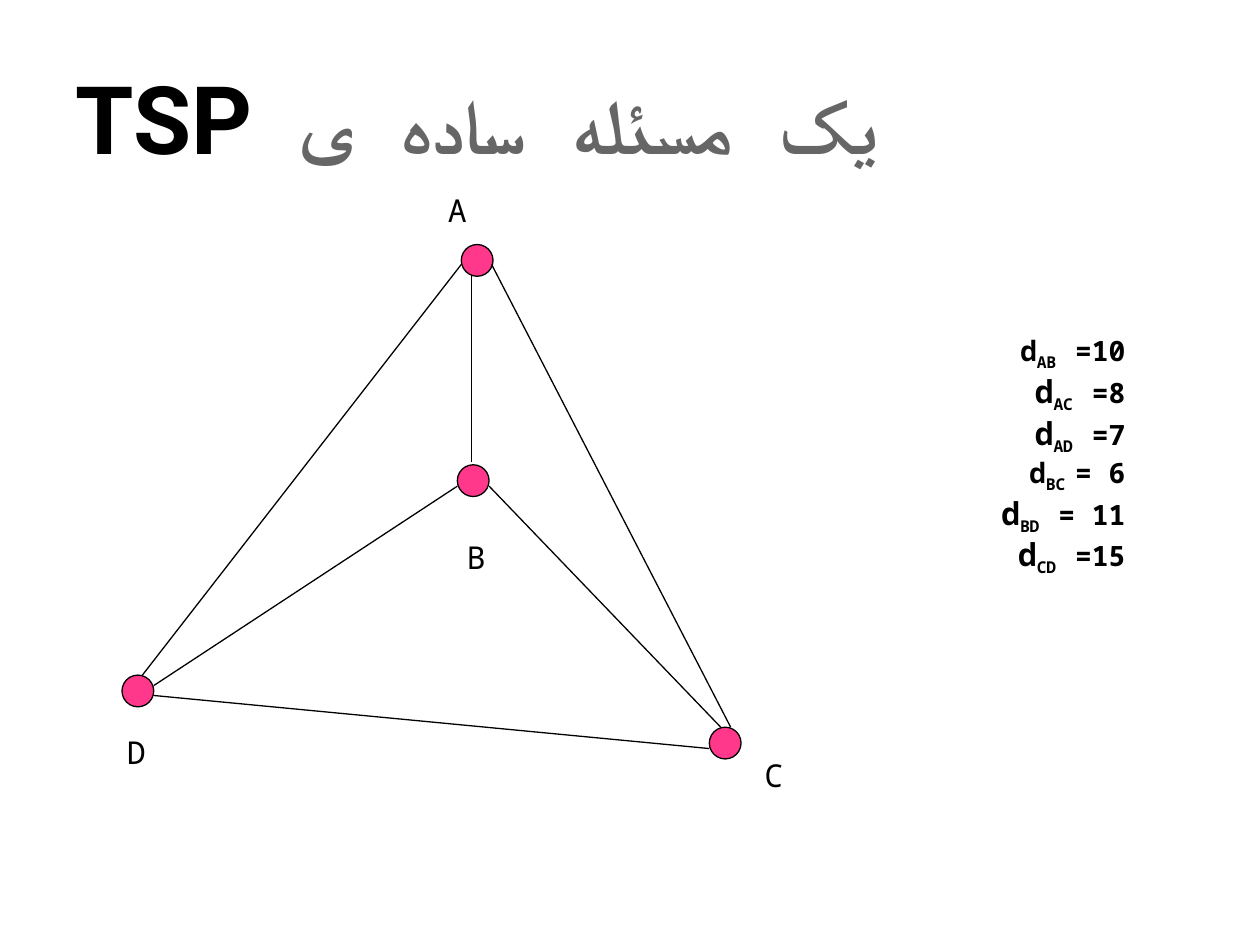
"""Build a slide that states a small travelling salesman problem."""
from dataclasses import dataclass

from lxml import etree
from pptx import Presentation
from pptx import util as u
from pptx.dml import color
from pptx.enum import shapes, text
from pptx.oxml import ns


@dataclass(frozen=True)
class Theme:
    """Colours, fonts and type sizes of the slide."""
    ink: color.RGBColor = color.RGBColor.from_string("000000")
    muted: color.RGBColor = color.RGBColor.from_string("666666")
    accent: color.RGBColor = color.RGBColor.from_string("FF388C")
    mono: str = "Noto Sans Mono"
    sans: str = "Roboto"
    title: int = 44
    acronym: int = 54
    label: int = 18
    value: int = 16
    line: float = 0.75


THEME = Theme()
NODE_SIZE = 0.64
LABEL_SIZE = (0.95, 1.02)
NODES = [(9.3, 4.93), (2.46, 13.61), (9.22, 9.37), (14.3, 14.66)]
LABELS = {"A": (8.71, 3.73), "D": (2.24, 14.66), "C": (15.09, 15.11), "B": (9.09, 10.72)}
EDGES = [
    ((2.87, 13.61), (9.3, 5.33)),
    ((3.1, 13.82), (9.22, 9.8)),
    ((9.86, 9.8), (14.53, 14.66)),
    ((3.1, 14.02), (14.3, 15.09)),
    ((14.73, 14.66), (9.91, 5.33)),
    ((9.5, 9.32), (9.5, 5.54)),
]
DISTANCES = [
    (THEME.value, "AB", " ", "=10"),
    (THEME.label, "AC", " ", "=8"),
    (THEME.label, "AD", " ", "=7"),
    (THEME.value, "BC ", "", "= 6"),
    (THEME.label, "BD", " ", "= 11"),
    (THEME.label, "CD", " ", "=15"),
]


def apply(target, values):
    """Set each attribute in values on target."""
    for name, value in values.items():
        setattr(target, name, value)


def place(shape, left, top, width, height):
    """Move and size a shape, in centimetres."""
    apply(shape, {"left": u.Cm(left), "top": u.Cm(top),
                  "width": u.Cm(width), "height": u.Cm(height)})


def set_right_to_left(para, alignment):
    """Give a paragraph right-to-left direction and an alignment."""
    para.alignment = alignment
    para._p.get_or_add_pPr().set("rtl", "1")


def add_span(para, words, size, bold=False, name=THEME.mono, ink=THEME.ink, subscript=False):
    """Add a formatted run to a paragraph."""
    span = para.add_run()
    span.text = words
    apply(span.font, {"size": u.Pt(size), "bold": bold, "name": name})
    span.font.color.rgb = ink
    props = span._r.get_or_add_rPr()
    etree.SubElement(props, ns.qn("a:cs")).set("typeface", name)
    if subscript:
        props.set("baseline", "-25000")


def fill_title(box):
    """Write the two-part title."""
    place(box, 1.27, 0.76, 22.86, 3.18)
    apply(box.text_frame, {"auto_size": text.MSO_AUTO_SIZE.NONE, "word_wrap": True,
                           "vertical_anchor": text.MSO_ANCHOR.MIDDLE})
    para = box.text_frame.paragraphs[0]
    set_right_to_left(para, text.PP_ALIGN.LEFT)
    add_span(para, "یک مسئله ساده ی ", THEME.title, True, ink=THEME.muted)
    add_span(para, "TSP", THEME.acronym, True, THEME.sans)


def fill_distances(box):
    """List the distance of each pair of nodes."""
    place(box, 18.29, 6.53, 4.65, 4.67)
    frame = box.text_frame
    apply(frame, {"auto_size": text.MSO_AUTO_SIZE.SHAPE_TO_FIT_TEXT, "word_wrap": True})
    for index, (size, pair, gap, value) in enumerate(DISTANCES):
        para = frame.add_paragraph() if index else frame.paragraphs[0]
        set_right_to_left(para, text.PP_ALIGN.RIGHT)
        para.space_before = u.Pt(0)
        props = para._p.get_or_add_pPr()
        for name in ("marL", "marR", "indent"):
            props.set(name, "0")
        etree.SubElement(props, ns.qn("a:buNone"))
        add_span(para, "d", size, True)
        add_span(para, pair, THEME.value, True, subscript=True)
        if gap:
            add_span(para, gap, THEME.label, True)
        add_span(para, value, THEME.value, True)


def set_outline(shape):
    """Draw a thin dark line on a shape or connector."""
    shape.line.color.rgb = THEME.ink
    shape.line.width = u.Pt(THEME.line)


def add_node(graph, left, top):
    """Draw one node of the graph."""
    node = graph.shapes.add_shape(shapes.MSO_SHAPE.OVAL, u.Cm(left), u.Cm(top),
                                  u.Cm(NODE_SIZE), u.Cm(NODE_SIZE))
    node.shadow.inherit = False
    node.fill.solid()
    node.fill.fore_color.rgb = THEME.accent
    set_outline(node)


def add_label(graph, name, left, top):
    """Write the letter of a node."""
    box = graph.shapes.add_textbox(u.Cm(left), u.Cm(top), *map(u.Cm, LABEL_SIZE))
    apply(box.text_frame, {"word_wrap": False,
                           "auto_size": text.MSO_AUTO_SIZE.SHAPE_TO_FIT_TEXT})
    para = box.text_frame.paragraphs[0]
    set_right_to_left(para, text.PP_ALIGN.RIGHT)
    add_span(para, name, THEME.label)


def add_edge(graph, start, end):
    """Draw a straight edge between two points."""
    edge = graph.shapes.add_connector(shapes.MSO_CONNECTOR.STRAIGHT,
                                      *map(u.Cm, start + end))
    set_outline(edge)
    etree.SubElement(edge._element.spPr, ns.qn("a:effectLst"))


def main():
    """Build and save the deck."""
    deck = Presentation()
    apply(deck, {"slide_width": u.Cm(25.4), "slide_height": u.Cm(19.05)})
    page = deck.slides.add_slide(deck.slide_layouts[1])
    fill_title(page.shapes.title)
    fill_distances(page.placeholders[1])
    graph = page.shapes.add_group_shape()
    for left, top in NODES:
        add_node(graph, left, top)
    for name, (left, top) in LABELS.items():
        add_label(graph, name, left, top)
    for start, end in EDGES:
        add_edge(graph, start, end)
    deck.save("out.pptx")


if __name__ == "__main__":
    main()
